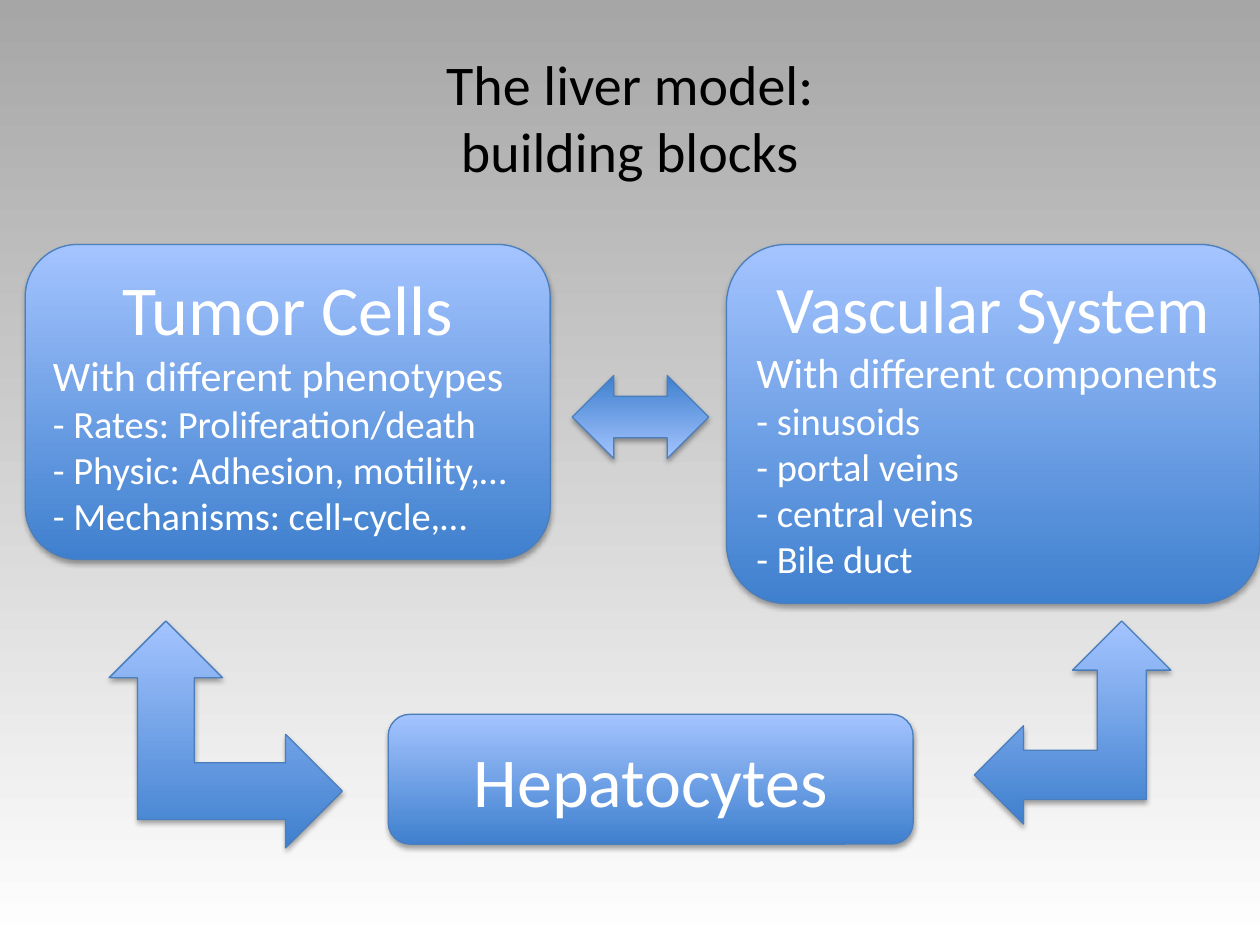
from lxml import etree
from pptx import Presentation
from pptx.dml import color
from pptx.enum import shapes, text
from pptx.oxml import ns
from pptx.util import Pt

COLORS = {"top": "A6A6A6", "bottom": "FFFFFF", "dark": "3F80CE", "light": "A4C4FF",
          "edge": "4B7EBC", "shadow": "000000", "title": "000000", "label": "FFFFFF"}
KINDS = shapes.MSO_SHAPE
ALIGN = text.PP_ALIGN


def set_gradient(fill, start, end, angle):
    """Two-stop linear gradient; the angle runs counter-clockwise."""
    fill.gradient()
    fill.gradient_angle = angle
    for stop, name in zip(fill.gradient_stops, (start, end)):
        stop.color.rgb = color.RGBColor.from_string(COLORS[name])


def add_block(kind, left, top, width, height):
    """Shape with the blue gradient, thin edge and soft shadow of the diagram."""
    block = page.shapes.add_shape(kind, Pt(left), Pt(top), Pt(width), Pt(height))
    set_gradient(block.fill, "dark", "light", 90)
    block.line.color.rgb = color.RGBColor.from_string(COLORS["edge"])
    block.line.width = Pt(0.75)
    block.shadow.inherit = False
    effects = block._element.spPr.find(ns.qn("a:effectLst"))
    shadow = etree.SubElement(effects, ns.qn("a:outerShdw"), blurRad=str(Pt(3.1)),
                              dist=str(Pt(1.8)), dir="5400000", rotWithShape="0")
    tint = etree.SubElement(shadow, ns.qn("a:srgbClr"), val=COLORS["shadow"])
    etree.SubElement(tint, ns.qn("a:alpha"), val="35000")
    return block


deck = Presentation()
deck.slide_width, deck.slide_height = Pt(720), Pt(540)
page = deck.slides.add_slide(deck.slide_layouts[5])
set_gradient(page.background.fill, "top", "bottom", 270)

title = page.shapes.title
for name, value in {"left": 36, "top": 21.6, "width": 648, "height": 90}.items():
    setattr(title, name, Pt(value))
title.text_frame.text = "The liver model:\vbuilding blocks"
title.text_frame.vertical_anchor = text.MSO_ANCHOR.MIDDLE
heading = title.text_frame.paragraphs[0]
heading.alignment = ALIGN.CENTER
for name, value in {"name": "Calibri", "size": Pt(32)}.items():
    setattr(heading.font, name, value)
heading.font.color.rgb = color.RGBColor.from_string(COLORS["title"])

# Each block: place, heading size, then heading, subheading and list lines
blocks = [
    ((415.15, 139.7, 304.85, 205.2), 38,
     ["Vascular System", "With different components", "- sinusoids",
      "- portal veins", "- central veins", "- Bile duct"]),
    ((14.4, 139.7, 300, 180), 40,
     ["Tumor Cells", "With different phenotypes", "- Rates: Proliferation/death",
      "- Physic: Adhesion, motility,…", "- Mechanisms: cell-cycle,…"]),
    ((221.8, 408.2, 300, 74.2), 40, ["Hepatocytes"]),
]
for place, heading_size, lines in blocks:
    frame = add_block(KINDS.FLOWCHART_ALTERNATE_PROCESS, *place).text_frame
    frame.word_wrap = True
    frame.vertical_anchor = text.MSO_ANCHOR.MIDDLE
    for index, line in enumerate(lines):
        para = frame.paragraphs[0] if index == 0 else frame.add_paragraph()
        para.alignment = ALIGN.CENTER if index == 0 else ALIGN.LEFT
        span = para.add_run()
        span.text = line
        size = (heading_size, 24)[index] if index < 2 else 22
        for name, value in {"name": "Calibri", "size": Pt(size)}.items():
            setattr(span.font, name, value)
        span.font.color.rgb = color.RGBColor.from_string(COLORS["label"])

arrows = [
    (KINDS.LEFT_UP_ARROW, (62.4, 354.9, 133.2, 129.6), 180, True),
    (KINDS.LEFT_UP_ARROW, (556.8, 354.9, 112.3, 116), 0, False),
    (KINDS.LEFT_RIGHT_ARROW, (327, 214.6, 78, 47.5), 0, True),
]
for kind, place, rotation, flipped in arrows:
    arrow = add_block(kind, *place)
    arrow.rotation = rotation
    if flipped:
        arrow._element.spPr.find(ns.qn("a:xfrm")).set("flipV", "1")

deck.save("out.pptx")
